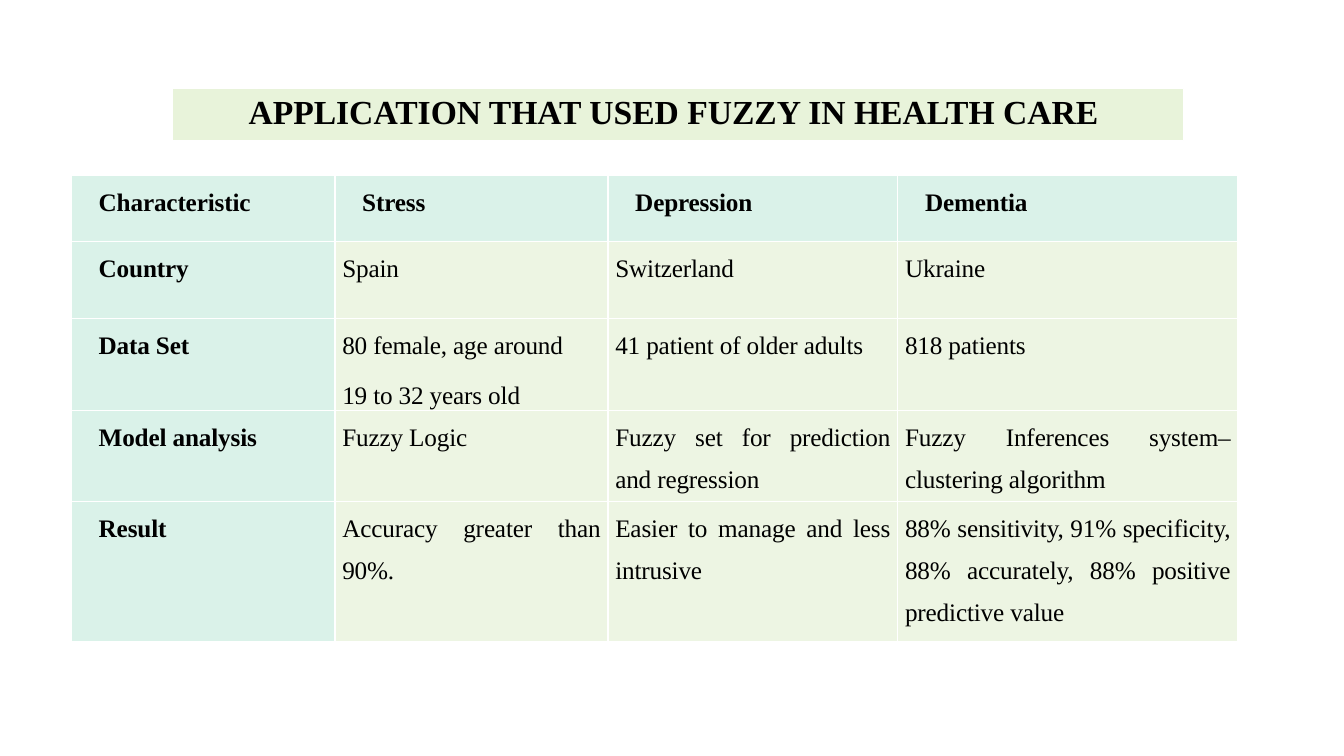
from pptx import Presentation
from pptx.dml.color import RGBColor
from pptx.enum.shapes import MSO_SHAPE
from pptx.enum.text import MSO_ANCHOR, PP_ALIGN
from pptx.util import Pt

RECT = MSO_SHAPE.RECTANGLE
MIDDLE = MSO_ANCHOR.MIDDLE
CENTER, LEFT, JUSTIFY = PP_ALIGN.CENTER, PP_ALIGN.LEFT, PP_ALIGN.JUSTIFY

PX = 9525
FONT = "Times New Roman"
COLORS = {
    "text": "000000",
    "line": "FFFFFF",
    "band": "E8F3DA",
    "heading": "DAF2E9",
    "body": "EDF5E3",
}

TITLE = "APPLICATION THAT USED FUZZY IN HEALTH CARE"
COL_WIDTHS = [251, 260, 276, 324]
ROW_HEIGHTS = [63, 73, 87, 87, 133]
FIRST_JUSTIFIED_ROW = 3
ROWS = [
    ["Characteristic", "Stress", "Depression", "Dementia"],
    ["Country", "Spain", "Switzerland", "Ukraine"],
    ["Data Set", "80 female, age around\n19 to 32 years old",
     "41 patient of older adults", "818 patients"],
    ["Model analysis", "Fuzzy Logic",
     "Fuzzy set for prediction and regression",
     "Fuzzy Inferences system–clustering algorithm"],
    ["Result", "Accuracy greater than 90%.",
     "Easier to manage and less intrusive",
     "88% sensitivity, 91% specificity, 88% accurately, "
     "88% positive predictive value"],
]


def px(*lengths):
    return [n * PX for n in lengths]


def rgb(name):
    return RGBColor.from_string(COLORS[name])


def add_run(p, text, size, bold):
    r = p.add_run()
    r.text = text
    r.font.name = FONT
    r.font.size = Pt(size)
    r.font.bold = bold
    r.font.color.rgb = rgb("text")
    return r


def add_title(s, x, y, w, h):
    band = s.shapes.add_shape(RECT, *px(x + 11, y + 23, w - 14, 50))
    band.shadow.inherit = False
    band.fill.solid()
    band.fill.fore_color.rgb = rgb("band")
    band.line.color.rgb = rgb("line")
    band.line.width = Pt(1)

    title = s.shapes.title
    title.left, title.top, title.width, title.height = px(x, y, w, h)
    title._element.addprevious(band._element)  # the band lies behind the title
    tf = title.text_frame
    tf.word_wrap = True
    tf.vertical_anchor = MIDDLE
    p = tf.paragraphs[0]
    p.alignment = CENTER
    p.line_spacing = 0.9
    add_run(p, TITLE, 24, True)


def fill_cell(cell, text, heading, align):
    cell.fill.solid()
    cell.fill.fore_color.rgb = rgb("heading" if heading else "body")
    cell.margin_left, cell.margin_top, cell.margin_right, cell.margin_bottom = px(7, 0, 7, 0)
    tf = cell.text_frame
    for i, line in enumerate(text.split("\n")):
        p = tf.add_paragraph() if i else tf.paragraphs[0]
        p.alignment = align
        p.line_spacing = 1.5
        p.space_after = Pt(6)
        if heading:
            pPr = p._p.get_or_add_pPr()
            pPr.set("marL", "0")
            pPr.set("indent", str(19 * PX))
        r = add_run(p, line, 18, heading)
        r._r.get_or_add_rPr().set("spc", "-10")


def add_comparison(s, x, y):
    """Add the table; its default style draws the white grid."""
    frame = s.shapes.add_table(len(ROWS), len(COL_WIDTHS),
                               *px(x, y, sum(COL_WIDTHS), sum(ROW_HEIGHTS)))
    table = frame.table
    for col, width in zip(table.columns, COL_WIDTHS):
        col.width = width * PX
    for row, height in zip(table.rows, ROW_HEIGHTS):
        row.height = height * PX
    for i, texts in enumerate(ROWS):
        for j, text in enumerate(texts):
            heading = i == 0 or j == 0
            justified = heading or i >= FIRST_JUSTIFIED_ROW
            fill_cell(table.cell(i, j), text, heading, JUSTIFY if justified else LEFT)


def main():
    prs = Presentation()
    prs.slide_width, prs.slide_height = px(1280, 720)
    s = prs.slides.add_slide(prs.slide_layouts[5])
    add_title(s, 153, 61, 977, 95)
    add_comparison(s, 68, 167)
    prs.save("out.pptx")


if __name__ == "__main__":
    main()
